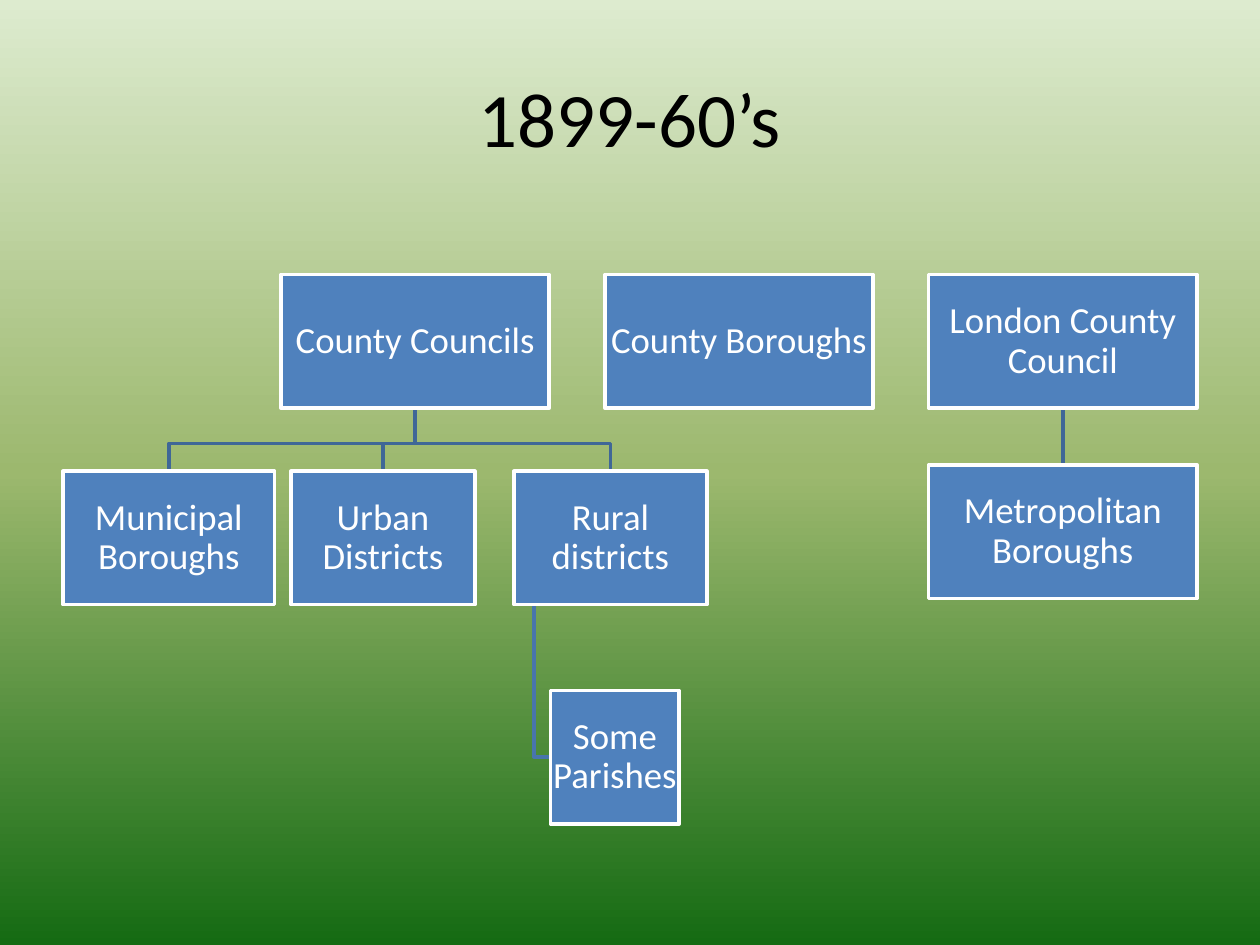
"""Build a slide with a chart of local government tiers."""
from copy import deepcopy

from lxml.etree import SubElement
from pptx import Presentation
from pptx.dml.color import RGBColor
from pptx.enum.shapes import MSO_CONNECTOR, MSO_SHAPE
from pptx.enum.text import MSO_ANCHOR, PP_ALIGN
from pptx.oxml.ns import qn
from pptx.util import Inches, Pt

TITLE = "1899-60’s"
TOP, MID, LOW, HIGH = 2.18, 3.74, 5.48, 1.06
WIDE, STEP = 2.13, 2.57
COLS = [2.23 + STEP * i for i in range(3)]
BOXES = {
    "County Councils": (COLS[0], TOP, WIDE),
    "Municipal Boroughs": (0.5, MID, 1.68),
    "Urban Districts": (2.31, MID, 1.46),
    "Rural districts": (4.08, MID, 1.53),
    "Some Parishes": (4.37, LOW, 1.02),
    "County Boroughs": (COLS[1], TOP, WIDE),
    "London County Council": (COLS[2], TOP, WIDE),
    "Metropolitan Boroughs": (COLS[2], 3.69, WIDE),
}
LINKS = [
    ("London County Council", "Metropolitan Boroughs", "drop"),
    ("Rural districts", "Some Parishes", "hang"),
    ("County Councils", "Rural districts", "fork"),
    ("County Councils", "Urban Districts", "fork"),
    ("County Councils", "Municipal Boroughs", "fork"),
]
THEME = {
    "font": "Calibri", "title": 44, "label": 21, "line": 2,
    "ink": "000000", "text": "FFFFFF", "box": "4F81BD", "edge": "FFFFFF",
    "drop": "3F6797", "fork": "3F6797", "hang": "4875AC",
    "sky": [(0, "DDEBCF"), (0.5, "9CB86E"), (1, "156B13")],
}


def color(name):
    return RGBColor.from_string(THEME[name])


def paint(slide):
    fill = slide.background.fill
    fill.gradient()
    fill.gradient_angle = 270
    stops = slide.element.find(".//" + qn("a:gsLst"))
    stops.append(deepcopy(stops[-1]))
    for stop, (place, shade) in zip(fill.gradient_stops, THEME["sky"]):
        stop.position = place
        stop.color.rgb = RGBColor.from_string(shade)


def write(frame, text, size, ink, gap=None):
    frame.text = text
    frame.word_wrap = True
    frame.vertical_anchor = MSO_ANCHOR.MIDDLE
    para = frame.paragraphs[0]
    para.alignment = PP_ALIGN.CENTER
    para.line_spacing = gap
    font = para.runs[0].font
    for key, value in {"name": THEME["font"], "size": Pt(THEME[size])}.items():
        setattr(font, key, value)
    font.color.rgb = color(ink)


def stroke(shape, name):
    shape.line.color.rgb = color(name)
    shape.line.width = Pt(THEME["line"])


def route(start, end, kind):
    left, top, width = BOXES[start]
    x, y, w = BOXES[end]
    base = top + HIGH
    if kind == "hang":
        side, level = left + 0.16, y + HIGH / 2
        return [(side, base), (side, level), (x, level)]
    mid, goal = left + width / 2, x + w / 2
    if kind == "drop":
        return [(mid, base), (goal, y)]
    bus = y - 0.22
    return [(mid, base), (mid, bus), (goal, bus), (goal, y)]


def join(shapes, start, end, kind):
    spots = [(Inches(x), Inches(y)) for x, y in route(start, end, kind)]
    if kind == "drop":
        shape = shapes.add_connector(MSO_CONNECTOR.STRAIGHT, *spots[0], *spots[1])
        SubElement(shape.element.spPr, qn("a:effectLst"))
    else:
        form = shapes.build_freeform(*spots[0])
        form.add_line_segments(spots[1:], close=False)
        shape = form.convert_to_shape()
        shape.fill.background()
        shape.shadow.inherit = False
    stroke(shape, kind)


def block(shapes, text, left, top, width):
    box = shapes.add_shape(MSO_SHAPE.RECTANGLE, *map(Inches, (left, top, width, HIGH)))
    box.shadow.inherit = False
    box.fill.solid()
    box.fill.fore_color.rgb = color("box")
    stroke(box, "edge")
    for side in ("left", "top", "right", "bottom"):
        setattr(box.text_frame, f"margin_{side}", Inches(0.01))
    write(box.text_frame, text, "label", "text", 0.9)


def main():
    deck = Presentation()
    deck.slide_width, deck.slide_height = Inches(10), Inches(7.5)
    slide = deck.slides.add_slide(deck.slide_layouts[5])
    paint(slide)
    title = slide.shapes.title
    spot = {"left": 0.5, "top": 0.3, "width": 9, "height": 1.25}
    for key, value in spot.items():
        setattr(title, key, Inches(value))
    write(title.text_frame, TITLE, "title", "ink")
    for link in LINKS:
        join(slide.shapes, *link)
    for text, place in BOXES.items():
        block(slide.shapes, text, *place)
    deck.save("out.pptx")


if __name__ == "__main__":
    main()
